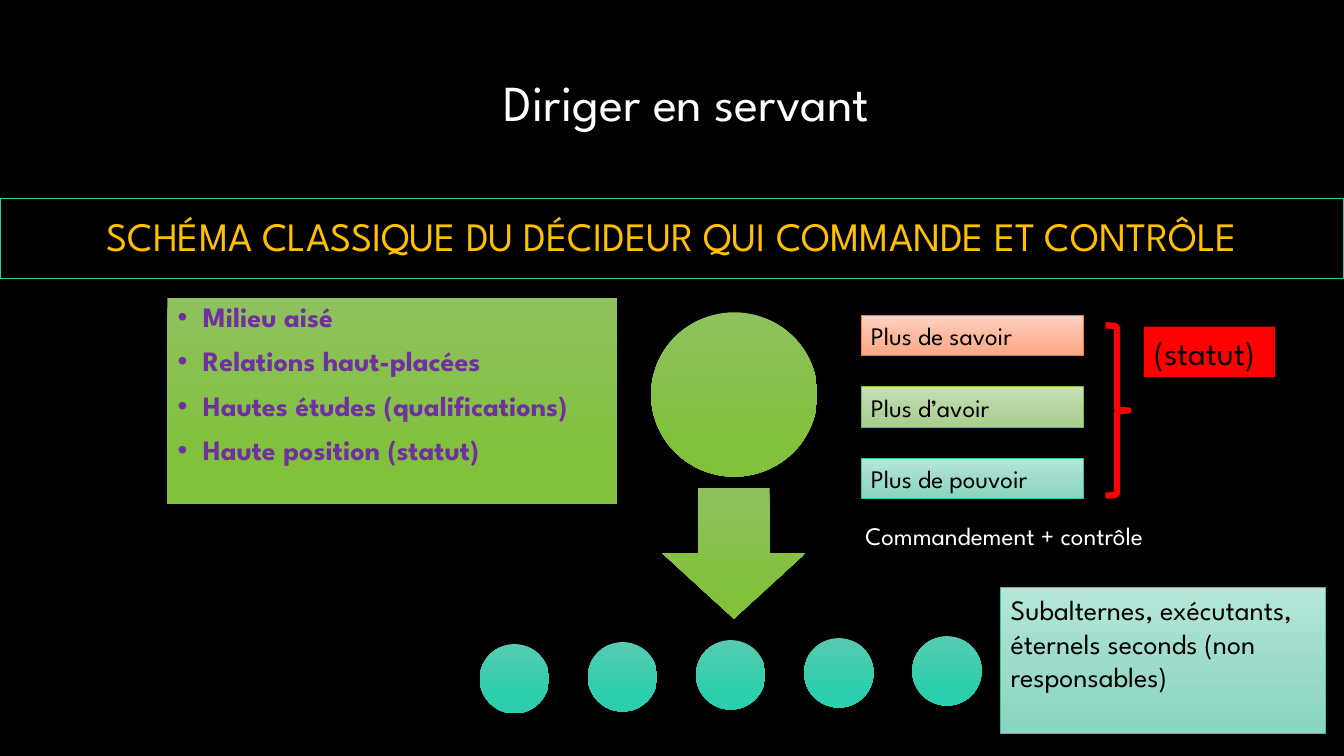
import copy

import pptx
import pptx.dml.color
import pptx.enum.shapes
import pptx.enum.text
import pptx.oxml
import pptx.oxml.ns
import pptx.util

Cm = pptx.util.Cm
SHAPE = pptx.enum.shapes.MSO_SHAPE
ALIGN = pptx.enum.text.PP_ALIGN
ANCHOR = pptx.enum.text.MSO_ANCHOR
FONT = "League Spartan"
GREEN = [(0, "8FC15E"), (0.78, "81C13C")]
TEAL = [(0, "55CCB1"), (0.78, "2BCEAD")]
PALE_ORANGE = [(0, "FFD2C2"), (0.52, "FEB99F"), (1, "FEA785")]
PALE_GREEN = [(0, "C8E1B7"), (0.52, "B5D49F"), (1, "A8CD8D")]
PALE_TEAL = [(0, "B6E7D9"), (0.52, "9DDBCA"), (1, "89D5C0")]


def color(value):
    return pptx.dml.color.RGBColor.from_string(value)


def place(shape, box):
    shape.left, shape.top, shape.width, shape.height = [Cm(length) for length in box]


def fill_solid(fill, value):
    fill.solid()
    fill.fore_color.rgb = color(value)


def fill_gradient(shape, stops):
    shape.fill.gradient()
    shape.fill.gradient_angle = 270
    stop_list = shape._element.spPr.find(".//" + pptx.oxml.ns.qn("a:gsLst"))
    for _ in stops[2:]:
        stop_list.append(copy.deepcopy(stop_list[-1]))
    for stop, (position, value) in zip(shape.fill.gradient_stops, stops):
        stop.position = position
        stop.color.rgb = color(value)


def outline(shape, value, width=0.75):
    if value is None:
        shape.line.fill.background()
    else:
        shape.line.color.rgb = color(value)
        shape.line.width = pptx.util.Pt(width)


def add_figure(slide, kind, box, stops=None, line=None, line_width=0.75):
    shape = slide.shapes.add_shape(kind, *[Cm(length) for length in box])
    shape.shadow.inherit = False
    if stops:
        fill_gradient(shape, stops)
    else:
        shape.fill.background()
    outline(shape, line, line_width)
    return shape


def write(shape, text, size, value, align=ALIGN.LEFT, anchor=ANCHOR.TOP, wrap=True, bold=False):
    frame = shape.text_frame
    frame.text = text
    frame.word_wrap = wrap
    frame.auto_size = pptx.enum.text.MSO_AUTO_SIZE.NONE
    frame.vertical_anchor = anchor
    for paragraph in frame.paragraphs:
        paragraph.alignment = align
        for run in paragraph.runs:
            run.font.name = FONT
            run.font.size = pptx.util.Pt(size)
            run.font.bold = bold
            run.font.color.rgb = color(value)


def add_heading(slide, box):
    heading = slide.shapes.add_textbox(*[Cm(length) for length in box])
    write(heading, "Diriger en servant", 36, "FFFFFF", ALIGN.CENTER, wrap=False)
    heading.text_frame.paragraphs[0].line_spacing = 0.9


def add_banner(slide, box):
    banner = slide.shapes.title
    place(banner, box)
    outline(banner, "32C7A9")
    write(banner, "SCHÉMA CLASSIQUE DU DÉCIDEUR QUI COMMANDE ET CONTRÔLE",
          28.8, "FFC000", ALIGN.CENTER, ANCHOR.MIDDLE)
    banner.text_frame.paragraphs[0].line_spacing = 0.9


def add_background_list(slide, box):
    body = slide.placeholders[1]
    place(body, box)
    fill_gradient(body, GREEN)
    items = ["Milieu aisé", "Relations haut-placées",
             "Hautes études (qualifications)", "Haute position (statut)"]
    write(body, "\n".join(items), 20, "7030A0", bold=True)
    for index, paragraph in enumerate(body.text_frame.paragraphs):
        properties = paragraph._p.get_or_add_pPr()
        properties.set("marL", str(Cm(0.64)))
        properties.set("indent", str(-Cm(0.64)))
        bullet = pptx.oxml.parse_xml(
            f'<a:buChar {pptx.oxml.ns.nsdecls("a")} char="•"/>')
        properties.append(bullet)
        paragraph.line_spacing = 0.9
        paragraph.space_before = pptx.util.Pt(10 if index else 0)


def add_leader(slide, box):
    left, top, width, height = box
    add_figure(slide, SHAPE.OVAL, (left, top, width, 4.14), GREEN)
    add_figure(slide, SHAPE.DOWN_ARROW, (left + 0.28, top + 4.42, 3.61, height - 4.42), GREEN)


def add_subordinates(slide, box):
    left, top, width, height = box
    diameter, count = 1.75, 5
    pitch = (width - diameter) / (count - 1)
    rise = (height - diameter) / (count - 1)
    for index in range(count):
        circle_box = (left + index * pitch, top + (count - 1 - index) * rise, diameter, diameter)
        add_figure(slide, SHAPE.OVAL, circle_box, TEAL)


def add_advantages(slide, box):
    left, top, width, height = box
    advantages = [("Plus de savoir", PALE_ORANGE, "FE801A"),
                  ("Plus d’avoir", PALE_GREEN, "81BB42"),
                  ("Plus de pouvoir", PALE_TEAL, "32C7A9")]
    for index, (text, stops, line) in enumerate(advantages):
        label_box = (left, top + index * 1.8, 5.6, 1.02)
        label = add_figure(slide, SHAPE.RECTANGLE, label_box, stops, line)
        write(label, text, 18, "000000")
    add_figure(slide, SHAPE.RIGHT_BRACE, (left + 6.16, top + 0.25, 0.58, 4.29),
               line="FF0000", line_width=4.5)
    status = add_figure(slide, SHAPE.RECTANGLE, (left + width - 3.3, top + 0.28, 3.3, 1.27))
    fill_solid(status.fill, "FF0000")
    write(status, "(statut)", 24, "000000", wrap=False)
    caption = slide.shapes.add_textbox(
        Cm(left - 0.14), Cm(top + height - 1.02), Cm(11.07), Cm(1.02))
    write(caption, "Commandement + contrôle", 18, "FFFFFF")


def add_subordinate_note(slide, box):
    note = add_figure(slide, SHAPE.RECTANGLE, box, PALE_TEAL, "32C7A9")
    write(note, "Subalternes, exécutants, éternels seconds (non responsables)", 20, "000000")


def main():
    presentation = pptx.Presentation()
    presentation.slide_width = Cm(33.87)
    presentation.slide_height = Cm(19.05)
    slide = presentation.slides.add_slide(presentation.slide_layouts[1])
    fill_solid(slide.background.fill, "000000")
    add_banner(slide, (0, 5, 33.87, 2.01))
    add_background_list(slide, (4.22, 7.52, 11.33, 5.18))
    add_leader(slide, (16.41, 7.87, 4.19, 7.72))
    add_advantages(slide, (21.7, 7.95, 10.43, 6.05))
    add_subordinate_note(slide, (25.22, 14.81, 8.18, 3.68))
    add_subordinates(slide, (12.09, 16.03, 12.65, 1.95))
    add_heading(slide, (11.66, 1.85, 11.3, 1.65))
    presentation.save("out.pptx")


if __name__ == "__main__":
    main()
